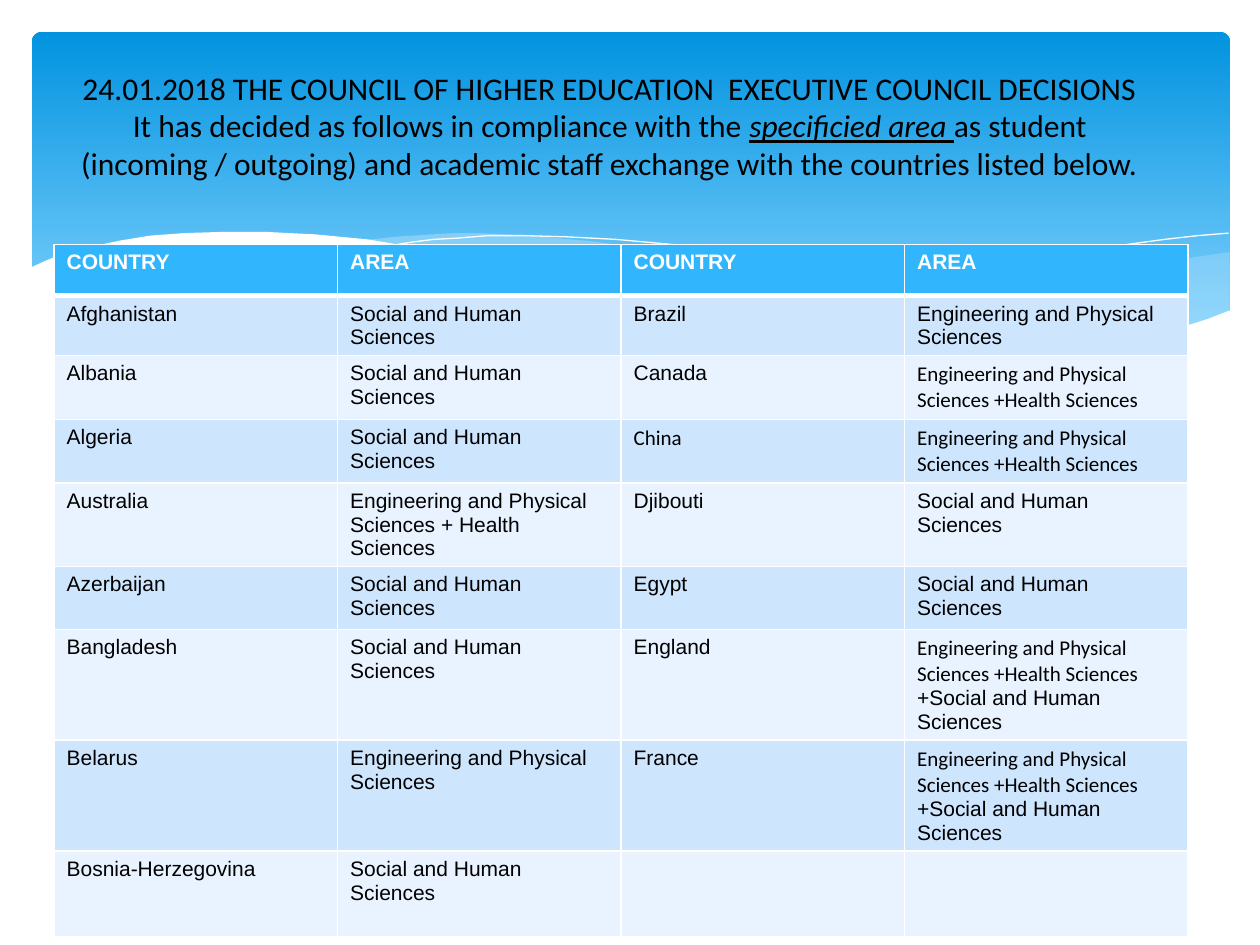
from lxml import etree
from pptx import Presentation
from pptx.dml.color import RGBColor
from pptx.enum.shapes import MSO_SHAPE
from pptx.enum.text import MSO_ANCHOR, PP_ALIGN
from pptx.oxml.ns import qn
from pptx.util import Cm, Pt

ROUNDED = MSO_SHAPE.ROUNDED_RECTANGLE
MIDDLE = MSO_ANCHOR.MIDDLE
CENTER = PP_ALIGN.CENTER
POINT_SCALE = Cm(2.54) / 100

WHITE, BLACK = "FFFFFF", "000000"
HEADER_FILL = "31B6FD"
BAND_FILLS = ("CEE5FE", "E8F3FF")
WAVE_FILL = "C6E7FC"

SOCIAL = "Social and Human Sciences"
PHYSICAL = "Engineering and Physical Sciences"
PHYSICAL_HEALTH = PHYSICAL + " +Health Sciences"
ALL_AREAS = PHYSICAL_HEALTH + "\n+" + SOCIAL
CALIBRI_TEXTS = {"China", PHYSICAL_HEALTH}

ROWS = [
    ("COUNTRY", "AREA", "COUNTRY", "AREA"),
    ("Afghanistan", SOCIAL, "Brazil", PHYSICAL),
    ("Albania", SOCIAL, "Canada", PHYSICAL_HEALTH),
    ("Algeria", SOCIAL, "China", PHYSICAL_HEALTH),
    ("Australia", PHYSICAL + " + Health Sciences", "Djibouti", SOCIAL),
    ("Azerbaijan", SOCIAL, "Egypt", SOCIAL),
    ("Bangladesh", SOCIAL, "England", ALL_AREAS),
    ("Belarus", PHYSICAL, "France", ALL_AREAS),
    ("Bosnia-Herzegovina", SOCIAL, "", ""),
]
ROW_HEIGHTS = (1.03, 0.97, 1.29, 1.03, 1.03, 1.27, 1, 0.93, 1.72)

RIGHT_WAVE = [
    (976, 200), (948, 204), (921, 210), (891, 216), (861, 223), (805, 237),
    (753, 248), (706, 257), (661, 265), (691, 269), (719, 272), (745, 275),
    (769, 277), (803, 278), (835, 277), (863, 275), (889, 272), (913, 267),
    (935, 262), (949, 257), (963, 252), (976, 247),
]
MIDDLE_WAVE = [
    (893, 273), (866, 269), (837, 265), (807, 260), (775, 254), (741, 247),
    (706, 240), (668, 231), (629, 222), (598, 214), (569, 208), (541, 203),
    (514, 198), (489, 194), (465, 191), (442, 189), (420, 187), (399, 186),
    (380, 185), (361, 185), (344, 186), (313, 188), (286, 191), (323, 196),
    (362, 203), (404, 211), (449, 222), (491, 232), (530, 240), (566, 248),
    (601, 255), (634, 261), (665, 266), (695, 270), (722, 274), (748, 276),
    (773, 277), (807, 278), (838, 278), (867, 276), (893, 273),
]
LONG_CURVE = [
    (309, 195), (328, 192), (344, 190), (363, 189), (387, 187), (416, 187),
    (450, 188), (489, 190), (533, 194), (582, 200), (636, 208), (695, 219),
    (727, 226), (760, 233), (795, 241), (831, 251), (869, 261), (907, 272),
]
RIGHT_CURVE = [
    (613, 257), (653, 246), (695, 235), (748, 223), (806, 210), (836, 204),
    (866, 199), (895, 194), (924, 190), (951, 187), (975, 185),
]
WHITE_WAVE = [
    (977, 246), (959, 253), (940, 259), (920, 265), (899, 269), (875, 273),
    (850, 275), (823, 277), (809, 277), (778, 276), (744, 274), (708, 270),
    (668, 265), (626, 258), (579, 250), (529, 239), (475, 227), (447, 220),
    (418, 213), (391, 207), (365, 202), (340, 197), (316, 194), (292, 190),
    (271, 188), (250, 186), (230, 185), (211, 184), (177, 184), (146, 185),
    (119, 187), (95, 191), (76, 195), (59, 199), (46, 203), (36, 207),
    (23, 213), (23, 329), (977, 329),
]


def color(value):
    return RGBColor.from_string(value)


def paint(fill, value):
    fill.solid()
    fill.fore_color.rgb = color(value)


def add_text(paragraph, text, text_color=BLACK, **values):
    run = paragraph.add_run()
    run.text = text
    run.font.color.rgb = color(text_color)
    for name, value in values.items():
        setattr(run.font, name, value)


def add_banner(slide):
    shape = slide.shapes.add_shape(ROUNDED, Cm(0.64), Cm(0.64), Cm(24.16), Cm(6.86))
    shape.adjustments[0] = 0.03
    shape.shadow.inherit = False
    shape.line.fill.background()
    shape.fill.gradient()
    shape.fill.gradient_angle = 270
    stops = ((0, "0293E0"), (0.9, "83D3FE"))
    for stop, (position, value) in zip(shape.fill.gradient_stops, stops):
        stop.position = position
        stop.color.rgb = color(value)


def add_outline(slide, points, close):
    builder = slide.shapes.build_freeform(*points[0], scale=POINT_SCALE)
    builder.add_line_segments(points[1:], close=close)
    shape = builder.convert_to_shape()
    shape.shadow.inherit = False
    return shape


def add_wave(slide, points, fill, opacity=100):
    shape = add_outline(slide, points, True)
    shape.line.fill.background()
    paint(shape.fill, fill)
    if opacity < 100:
        solid = shape.fill._xPr.find(qn("a:solidFill"))
        etree.SubElement(solid[0], qn("a:alpha"), val=str(opacity * 1000))


def add_curve(slide, points):
    shape = add_outline(slide, points, False)
    shape.fill.background()
    paint(shape.line.fill, WHITE)
    shape.line.width = Cm(0)


def add_borders(cell, top, bottom):
    properties = cell._tc.get_or_add_tcPr()
    for side, width in (("L", 1), ("R", 1), ("T", top), ("B", bottom)):
        line = etree.SubElement(properties, qn("a:ln" + side), w=str(Pt(width)))
        solid = etree.SubElement(line, qn("a:solidFill"))
        etree.SubElement(solid, qn("a:srgbClr"), val=WHITE)


def fill_cell(cell, text, row_number):
    header = row_number == 0
    add_borders(cell, 3 if row_number == 1 else 1, 3 if header else 1)
    paint(cell.fill, HEADER_FILL if header else BAND_FILLS[(row_number - 1) % 2])
    if not text:
        return
    for index, line in enumerate(text.split("\n")):
        frame = cell.text_frame
        paragraph = frame.add_paragraph() if index else frame.paragraphs[0]
        font = "Calibri" if line in CALIBRI_TEXTS else "Arial"
        add_text(paragraph, line, WHITE if header else BLACK,
                 name=font, size=Pt(12), bold=header)


def add_country_table(slide):
    frame = slide.shapes.add_table(len(ROWS), len(ROWS[0]), Cm(1.09), Cm(4.93),
                                   Cm(22.86), Cm(sum(ROW_HEIGHTS)))
    table = frame.table
    for row_number, (texts, height) in enumerate(zip(ROWS, ROW_HEIGHTS)):
        table.rows[row_number].height = Cm(height)
        for column_number, text in enumerate(texts):
            fill_cell(table.cell(row_number, column_number), text, row_number)


def add_title(slide):
    frame = slide.shapes.add_textbox(Cm(1.09), Cm(0.53), Cm(22.4), Cm(3.99)).text_frame
    for name, value in {"word_wrap": True, "vertical_anchor": MIDDLE}.items():
        setattr(frame, name, value)
    paragraph = frame.paragraphs[0]
    paragraph.alignment = CENTER
    style = {"name": "Calibri", "size": Pt(18)}
    add_text(paragraph, "24.01.2018 THE COUNCIL OF HIGHER EDUCATION  EXECUTIVE COUNCIL DECISIONS", **style)
    paragraph.add_line_break()
    add_text(paragraph, "It has decided as follows in compliance with the ", **style)
    add_text(paragraph, "specificied area ", italic=True, underline=True, **style)
    add_text(paragraph, "as student (incoming / outgoing) and academic staff exchange "
             "with the countries listed below.", **style)


def main():
    presentation = Presentation()
    presentation.slide_width = Cm(25.4)
    presentation.slide_height = Cm(19.05)
    slide = presentation.slides.add_slide(presentation.slide_layouts[6])
    paint(slide.background.fill, WHITE)
    add_banner(slide)
    add_wave(slide, RIGHT_WAVE, WAVE_FILL, 29)
    add_wave(slide, MIDDLE_WAVE, WAVE_FILL, 40)
    add_curve(slide, LONG_CURVE)
    add_curve(slide, RIGHT_CURVE)
    add_wave(slide, WHITE_WAVE, WHITE)
    add_country_table(slide)
    add_title(slide)
    presentation.save("out.pptx")


if __name__ == "__main__":
    main()
